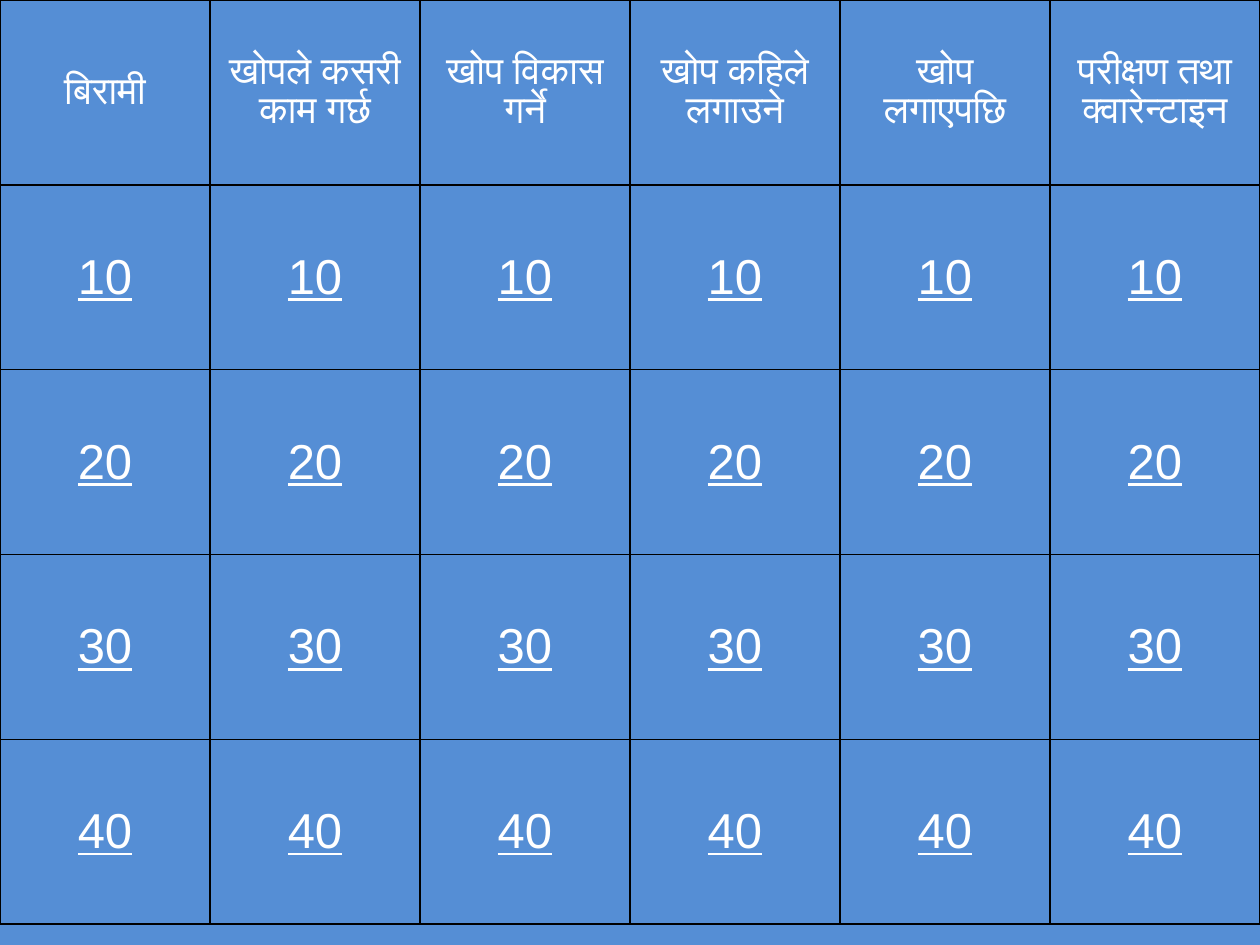
import pptx
import pptx.dml.color
import pptx.enum.text
import pptx.oxml
import pptx.oxml.ns
import pptx.util

Cm, Pt = pptx.util.Cm, pptx.util.Pt

TOPICS = ["बिरामी", "खोपले कसरी काम गर्छ", "खोप विकास गर्ने",
          "खोप कहिले लगाउने", "खोप लगाएपछि", "परीक्षण तथा क्वारेन्टाइन"]
POINTS = [10, 20, 30, 40]


def color(hex_text):
    return pptx.dml.color.RGBColor.from_string(hex_text)


def write(tf, text, size, hue, font, underline=None, line_height=None):
    p = tf.paragraphs[0]
    p.alignment = pptx.enum.text.PP_ALIGN.CENTER
    if line_height:
        p.line_spacing = Pt(line_height)
    r = p.add_run()
    r.text = text
    r.font.name = font
    r.font.size = Pt(size)
    r.font.underline = underline
    r.font.color.rgb = color(hue)


class Board:
    """Holds the style and the current slide."""
    font = "Arial"
    text = "FFFFFF"
    back = "558ED5"
    border = "000000"

    def __init__(self, prs):
        self.slide = prs.slides.add_slide(prs.slide_layouts[6])
        fill = self.slide.background.fill
        fill.solid()
        fill.fore_color.rgb = color(self.back)

    def outline(self, cell):
        tc_pr = cell._tc.get_or_add_tcPr()
        for i, side in enumerate(("lnL", "lnR", "lnT", "lnB")):
            tc_pr.insert(i, pptx.oxml.parse_xml(
                f'<a:{side} {pptx.oxml.ns.nsdecls("a")} w="{Pt(1)}"><a:solidFill>'
                f'<a:srgbClr val="{self.border}"/></a:solidFill></a:{side}>'))

    def table(self, rows, left, top, width, height, header, body):
        tbl = self.slide.shapes.add_table(
            len(rows), len(rows[0]), left, top, width, height).table
        tbl.first_row = tbl.horz_banding = False
        for i, row in enumerate(rows):
            for j, text in enumerate(row):
                cell = tbl.cell(i, j)
                cell.fill.background()
                cell.vertical_anchor = pptx.enum.text.MSO_ANCHOR.MIDDLE
                write(cell.text_frame, text, hue=self.text, font=self.font,
                      **(body if i else header))
                self.outline(cell)


def main():
    prs = pptx.Presentation()
    prs.slide_width, prs.slide_height = Cm(25.4), Cm(19.05)
    board = Board(prs)

    # Topics on top, then one row for each point value
    rows = [TOPICS] + [[str(n)] * len(TOPICS) for n in POINTS]
    board.table(rows, 0, 0, prs.slide_width, Cm(18.63),
                header={"size": 22, "line_height": 22.3},
                body={"size": 28, "underline": True})

    prs.save("out.pptx")


if __name__ == "__main__":
    main()
